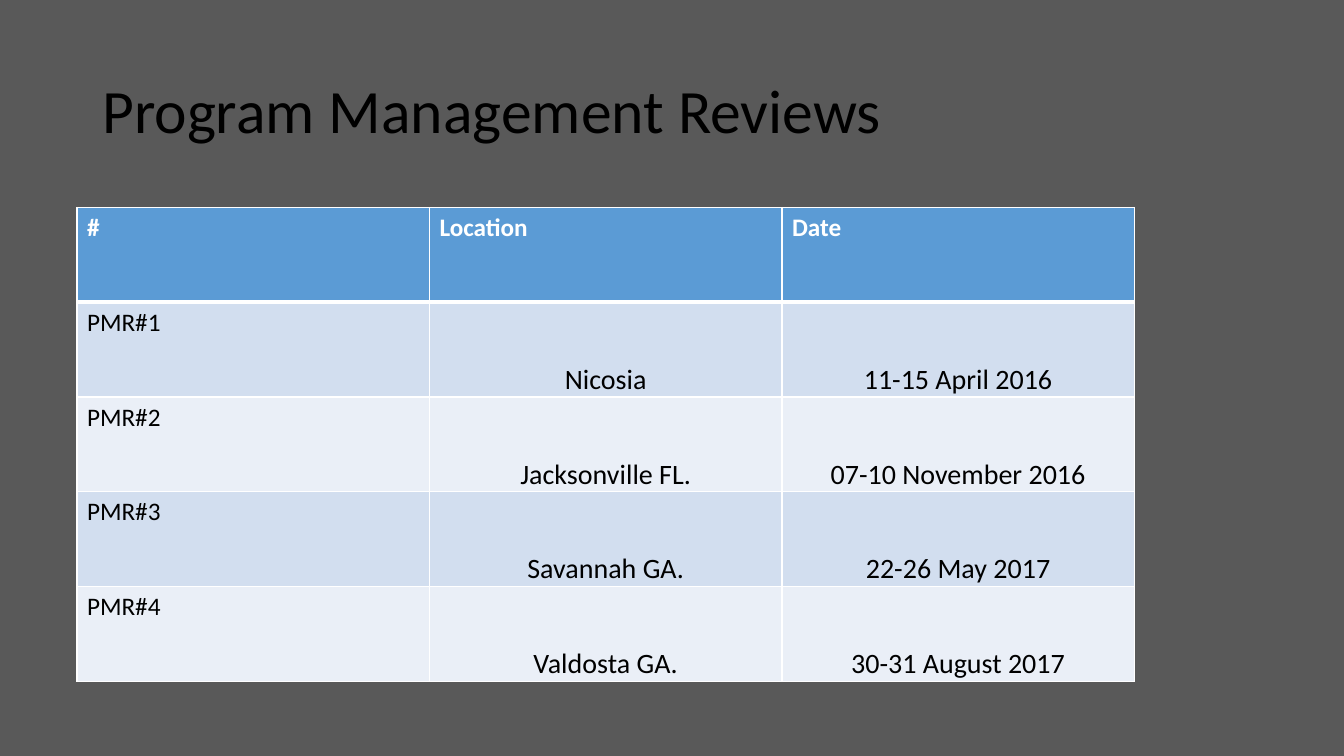
from pptx import Presentation
from pptx.dml.color import RGBColor as RGB
from pptx.enum.text import MSO_ANCHOR as Anchor, PP_ALIGN as Align
from pptx.oxml import parse_xml
from pptx.oxml.ns import nsdecls
from pptx.util import Pt

GRAY = RGB(0x59, 0x59, 0x59)
BLACK = RGB(0, 0, 0)
WHITE = RGB(0xFF, 0xFF, 0xFF)
BLUE = RGB(0x5B, 0x9B, 0xD5)
BANDS = [RGB(0xEA, 0xEF, 0xF7), RGB(0xD2, 0xDE, 0xEF)]

HEAD = {"size": Pt(18), "bold": True, "color": WHITE}
LABEL = {"size": Pt(18), "bold": False, "color": BLACK}
VALUE = {"size": Pt(20), "bold": False, "color": BLACK}
TITLE = {"size": Pt(44), "bold": False, "color": BLACK}
INSETS = {
    "margin_left": Pt(0.75),
    "margin_right": Pt(0.75),
    "margin_top": Pt(0.75),
    "margin_bottom": Pt(0),
    "vertical_anchor": Anchor.BOTTOM,
}

REVIEWS = [
    ("#", "Location", "Date"),
    ("PMR#1", "Nicosia", "11-15 April 2016"),
    ("PMR#2", "Jacksonville FL.", "07-10 November 2016"),
    ("PMR#3", "Savannah GA.", "22-26 May 2017"),
    ("PMR#4", "Valdosta GA.", "30-31 August 2017"),
]


def assign(item, values):
    for name, value in values.items():
        setattr(item, name, value)


def write(frame, text, style):
    para = frame.paragraphs[0]
    run = para.add_run()
    run.text = text
    run.font.name = "Calibri"
    for name, value in style.items():
        if name == "color":
            run.font.color.rgb = value
        else:
            setattr(run.font, name, value)
    return para


def add_title(slide, text):
    box = slide.shapes.add_textbox(Pt(66), Pt(28.75), Pt(828), Pt(104.4))
    frame = box.text_frame
    assign(frame, {"word_wrap": True, "vertical_anchor": Anchor.MIDDLE})
    write(frame, text, TITLE).line_spacing = 0.9


def add_edges(cell, widths):
    props = cell._tc.get_or_add_tcPr()
    for spot, (side, width) in enumerate(widths.items()):
        props.insert(spot, parse_xml(
            f'<a:ln{side} {nsdecls("a")} w="{Pt(width)}">'
            f'<a:solidFill><a:srgbClr val="{WHITE}"/></a:solidFill>'
            f'</a:ln{side}>'))


def fill_cell(cell, text, row, col):
    cell.fill.solid()
    cell.fill.fore_color.rgb = BANDS[row % 2] if row else BLUE
    add_edges(cell, {
        "L": 1,
        "R": 1,
        "T": 3 if row == 1 else 1,
        "B": 1 if row else 3,
    })
    style = HEAD if row == 0 else VALUE if col else LABEL
    para = write(cell.text_frame, text, style)
    if row and col:
        para.alignment = Align.CENTER
        assign(cell, INSETS)


def add_grid(slide, data):
    shape = slide.shapes.add_table(
        len(data), len(data[0]), Pt(55), Pt(148.2), Pt(755.4), Pt(338.5))
    table = shape.table
    for line in table.rows:
        line.height = Pt(67.7)
    for line in table.columns:
        line.width = Pt(251.8)
    for row, texts in enumerate(data):
        for col, text in enumerate(texts):
            fill_cell(table.cell(row, col), text, row, col)


def main():
    deck = Presentation()
    assign(deck, {"slide_width": Pt(960), "slide_height": Pt(540)})
    slide = deck.slides.add_slide(deck.slide_layouts[6])
    back = slide.background.fill
    back.solid()
    back.fore_color.rgb = GRAY
    add_title(slide, "Program Management Reviews")
    add_grid(slide, REVIEWS)
    deck.save("out.pptx")


if __name__ == "__main__":
    main()
